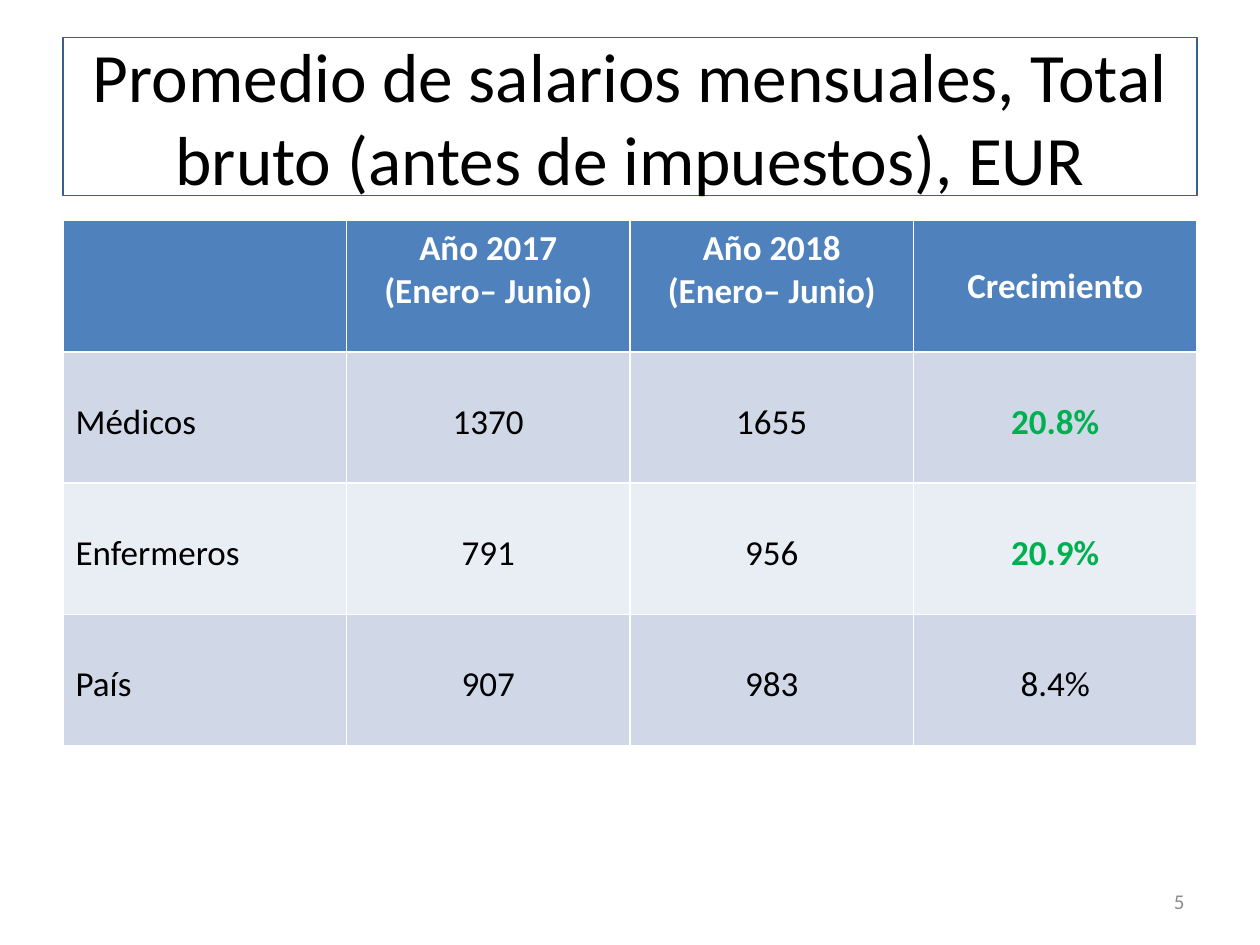
import pptx
import pptx.util
import pptx.dml.color
import pptx.enum.shapes
import pptx.enum.text

Cm = pptx.util.Cm
Pt = pptx.util.Pt
RGB = pptx.dml.color.RGBColor
ALIGN = pptx.enum.text.PP_ALIGN
MIDDLE = pptx.enum.text.MSO_ANCHOR.MIDDLE

BLACK = RGB(0x00, 0x00, 0x00)
WHITE = RGB(0xFF, 0xFF, 0xFF)
GRAY = RGB(0x8C, 0x8C, 0x8C)
NAVY = RGB(0x3A, 0x5F, 0x8C)
BLUE = RGB(0x4F, 0x81, 0xBD)
GREEN = RGB(0x00, 0xB0, 0x50)
BANDS = (RGB(0xE9, 0xED, 0xF4), RGB(0xD0, 0xD8, 0xE8))

HEADS = ("", "Año 2017\n(Enero– Junio)", "Año 2018\n(Enero– Junio)", "Crecimiento")
ROWS = (
    ("Médicos", "1370", "1655", "20.8%"),
    ("Enfermeros", "791", "956", "20.9%"),
    ("País", "907", "983", "8.4%"),
)
RISES = ("20.8%", "20.9%")


def write(frame, text, size, color, align, bold=False):
    """Put styled text into a text frame."""
    frame.text = text
    for para in frame.paragraphs:
        para.alignment = align
        for run in para.runs:
            font = run.font
            font.name = "Calibri"
            font.size = Pt(size)
            font.bold = bold
            font.color.rgb = color


def add_title(slide, left, top, width, height):
    """Draw the outlined title box."""
    kind = pptx.enum.shapes.MSO_SHAPE.RECTANGLE
    box = slide.shapes.add_shape(kind, left, top, width, height)
    box.shadow.inherit = False
    box.fill.background()
    box.line.color.rgb = NAVY
    box.line.width = Pt(0.75)
    frame = box.text_frame
    frame.word_wrap = True
    frame.vertical_anchor = MIDDLE
    text = "Promedio de salarios mensuales, Total bruto (antes de impuestos), EUR"
    write(frame, text, 39.6, BLACK, ALIGN.CENTER)


def add_wages(slide, left, top, width, height):
    """Draw the table of monthly wages."""
    count = len(ROWS) + 1
    frame = slide.shapes.add_table(count, len(HEADS), left, top, width, height)
    table = frame.table
    for r, row in enumerate((HEADS, *ROWS)):
        for c, text in enumerate(row):
            cell = table.cell(r, c)
            cell.fill.solid()
            cell.fill.fore_color.rgb = BANDS[r % 2] if r else BLUE
            if r:
                cell.margin_top = Cm(0.99)
            elif text == "Crecimiento":
                cell.margin_top = Cm(0.9)
            rise = text in RISES
            color = GREEN if rise else BLACK if r else WHITE
            align = ALIGN.CENTER if c else ALIGN.LEFT
            write(cell.text_frame, text, 20, color, align, rise or r == 0)


def add_number(slide, left, top, width, height):
    """Write the page number."""
    frame = slide.shapes.add_textbox(left, top, width, height).text_frame
    frame.word_wrap = True
    frame.vertical_anchor = MIDDLE
    write(frame, "5", 12, GRAY, ALIGN.RIGHT)


def main():
    """Build and save the slide."""
    deck = pptx.Presentation()
    deck.slide_width = Cm(25.4)
    deck.slide_height = Cm(19.05)
    slide = deck.slides.add_slide(deck.slide_layouts[6])
    left, width = Cm(1.27), Cm(22.86)
    add_title(slide, left, Cm(0.76), width, Cm(3.18))
    add_wages(slide, left, Cm(4.45), width, Cm(10.58))
    add_number(slide, Cm(18.2), Cm(17.66), Cm(5.93), Cm(1.01))
    deck.save("out.pptx")


if __name__ == "__main__":
    main()
